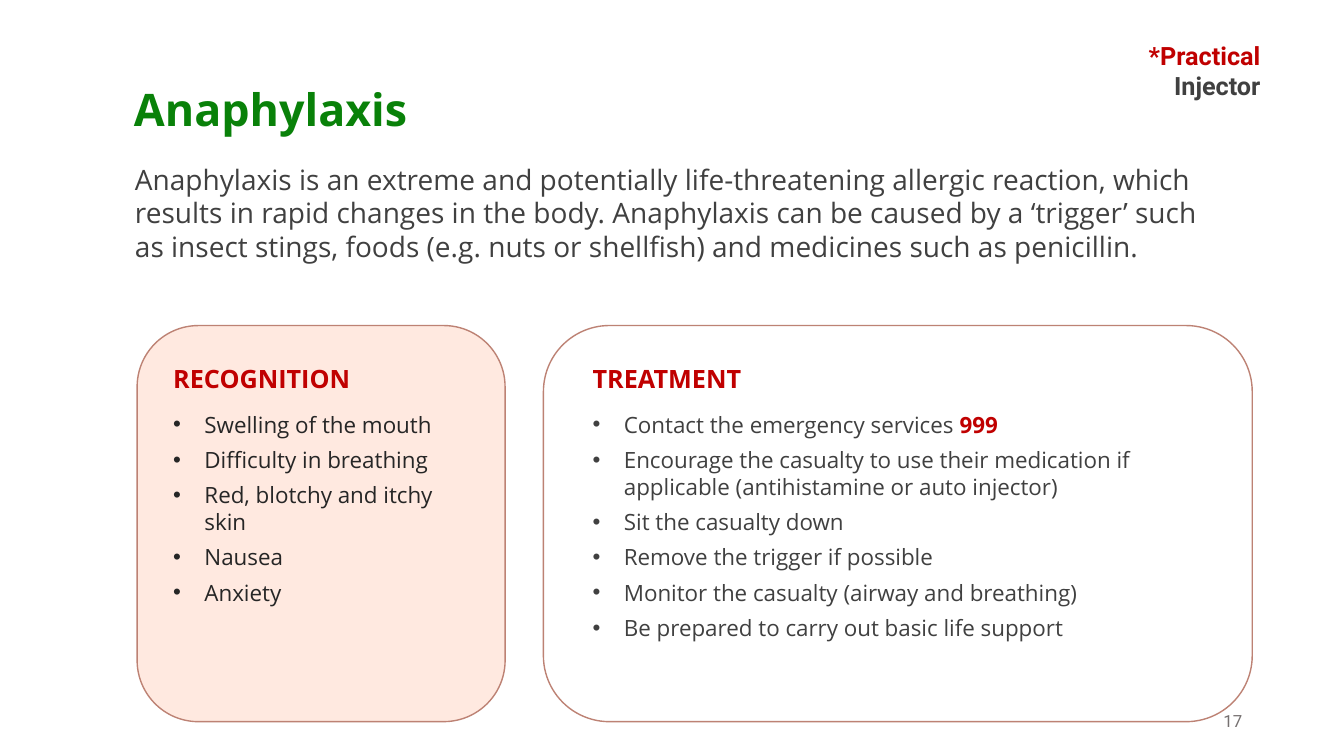
from pptx import Presentation
from pptx.dml.color import RGBColor
from pptx.enum.shapes import MSO_SHAPE as Preset
from pptx.enum.text import MSO_ANCHOR as Anchor, PP_ALIGN as Align
from pptx.oxml.ns import qn
from pptx.util import Inches, Pt
from lxml.etree import SubElement

COLORS = {
    "title": "098109",
    "accent": "C00000",
    "body": "404040",
    "dark": "262626",
    "number": "767171",
    "border": "BD8274",
    "blush": "FFE9E0",
    "white": "FFFFFF",
}
MAIN_FONT = "Open Sans"
SIDE_FONT = "Roboto"
CARD_TOP, CARD_HEIGHT = 3.23, 3.93
INDENT = 0.31

RECOGNITION = [
    "Swelling of the mouth",
    "Difficulty in breathing",
    "Red, blotchy and itchy skin",
    "Nausea",
    "Anxiety",
]
TREATMENT = [
    "Contact the emergency services ",
    "Encourage the casualty to use their medication if applicable "
    "(antihistamine or auto injector)",
    "Sit the casualty down",
    "Remove the trigger if possible",
    "Monitor the casualty (airway and breathing)",
    "Be prepared to carry out basic life support",
]


def rgb(name):
    return RGBColor.from_string(COLORS[name])


def style(span, size, color, bold=False, font=MAIN_FONT):
    span.font.name = font
    span.font.size = Pt(size)
    span.font.bold = bold
    span.font.color.rgb = rgb(color)


def add_text(page, area, text, size, color, bold=False, font=MAIN_FONT,
             align=Align.LEFT):
    box = page.shapes.add_textbox(*map(Inches, area))
    frame = box.text_frame
    frame.word_wrap = True
    frame.text = text
    for para in frame.paragraphs:
        para.alignment = align
        style(para.runs[0], size, color, bold, font)
    return frame


def add_bullet(para):
    props = para._p.get_or_add_pPr()
    props.set("marL", str(Inches(INDENT)))
    props.set("indent", str(-Inches(INDENT)))
    SubElement(props, qn("a:buFont")).set("typeface", "Arial")
    SubElement(props, qn("a:buChar")).set("char", "•")


def add_card(page, left, width, inset, fill, heading, items, color):
    card = page.shapes.add_shape(
        Preset.ROUNDED_RECTANGLE,
        *map(Inches, (left, CARD_TOP, width, CARD_HEIGHT)))
    card.shadow.inherit = False
    card.fill.solid()
    card.fill.fore_color.rgb = rgb(fill)
    card.line.color.rgb = rgb("border")
    card.line.width = Pt(1)

    area = (left + inset, CARD_TOP + 0.33, width - 1.7 * inset, 2.86)
    frame = add_text(page, area, heading, 18, "accent", bold=True)
    frame.paragraphs[0].space_after = Pt(12)
    for item in items:
        para = frame.add_paragraph()
        para.text = item
        para.space_after = Pt(6)
        add_bullet(para)
        style(para.runs[0], 16, color)
    return frame


def add_header(page):
    add_text(page, (1.23, 0.76, 3.12, 0.64), "Anaphylaxis", 32, "title",
             bold=True)
    add_text(page, (1.24, 1.56, 11.07, 1.11),
             "Anaphylaxis is an extreme and potentially life-threatening "
             "allergic reaction, which results in rapid changes in the body. "
             "Anaphylaxis can be caused by a ‘trigger’ such as insect stings, "
             "foods (e.g. nuts or shellfish) and medicines such as "
             "penicillin.", 20, "body")


def add_practical_note(page):
    frame = add_text(page, (10.36, 0.35, 2.24, 0.71), "*Practical\nInjector",
                     18, "accent", True, SIDE_FONT, Align.RIGHT)
    frame.paragraphs[1].runs[0].font.color.rgb = rgb("body")


def add_page_number(page):
    frame = add_text(page, (9.42, 6.95, 3, 0.4), "17", 12, "number",
                     font=SIDE_FONT, align=Align.RIGHT)
    frame.vertical_anchor = Anchor.MIDDLE


def main():
    deck = Presentation()
    deck.slide_width, deck.slide_height = Inches(13.33), Inches(7.5)
    page = deck.slides.add_slide(deck.slide_layouts[6])
    add_page_number(page)
    add_header(page)
    add_card(page, 1.36, 3.65, 0.26, "blush", "RECOGNITION", RECOGNITION,
             "dark")
    treatment = add_card(page, 5.39, 7.03, 0.39, "white", "TREATMENT",
                         TREATMENT, "body")
    emergency_number = treatment.paragraphs[1].add_run()
    emergency_number.text = "999"
    style(emergency_number, 16, "accent", bold=True)
    add_practical_note(page)
    deck.save("out.pptx")


if __name__ == "__main__":
    main()
